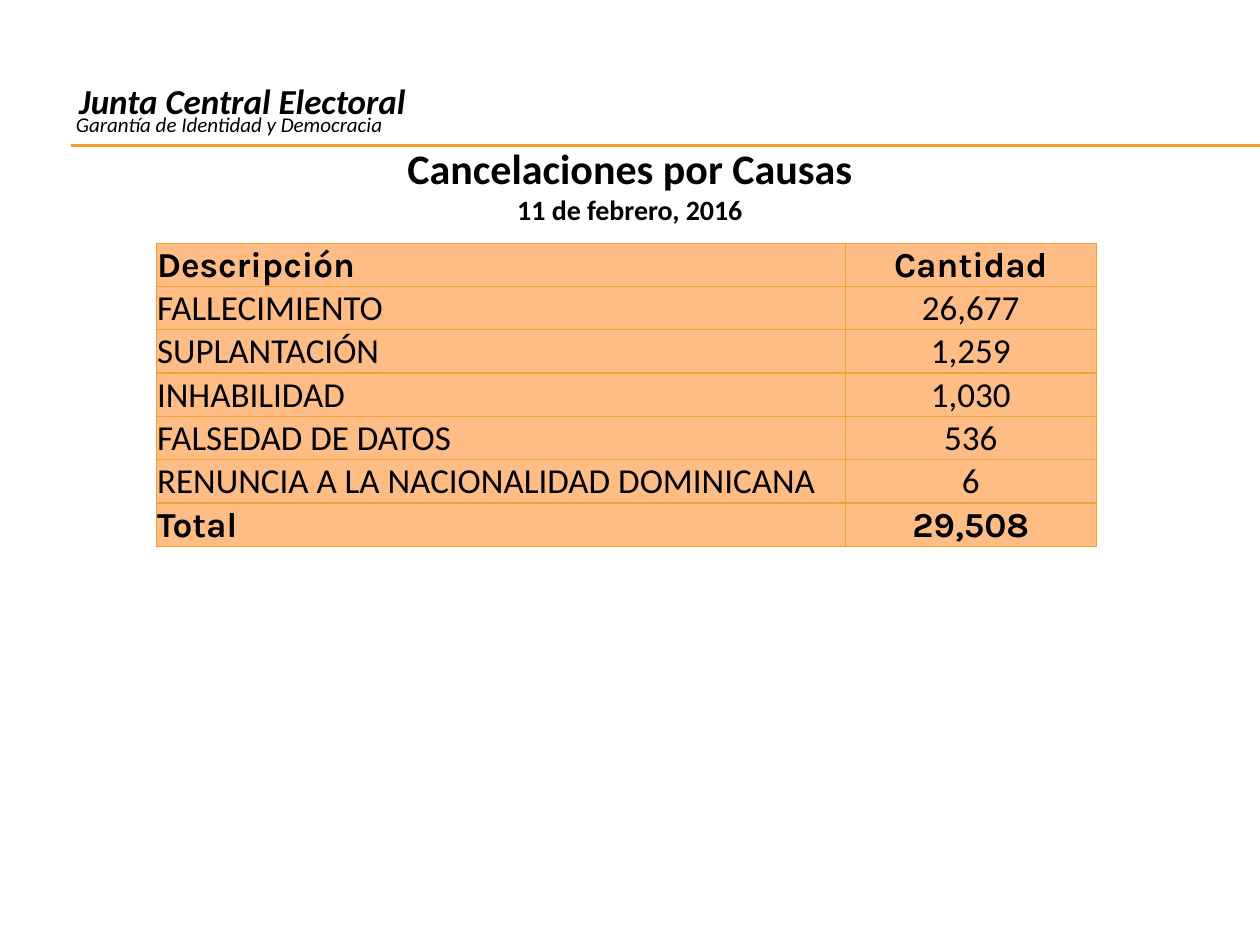
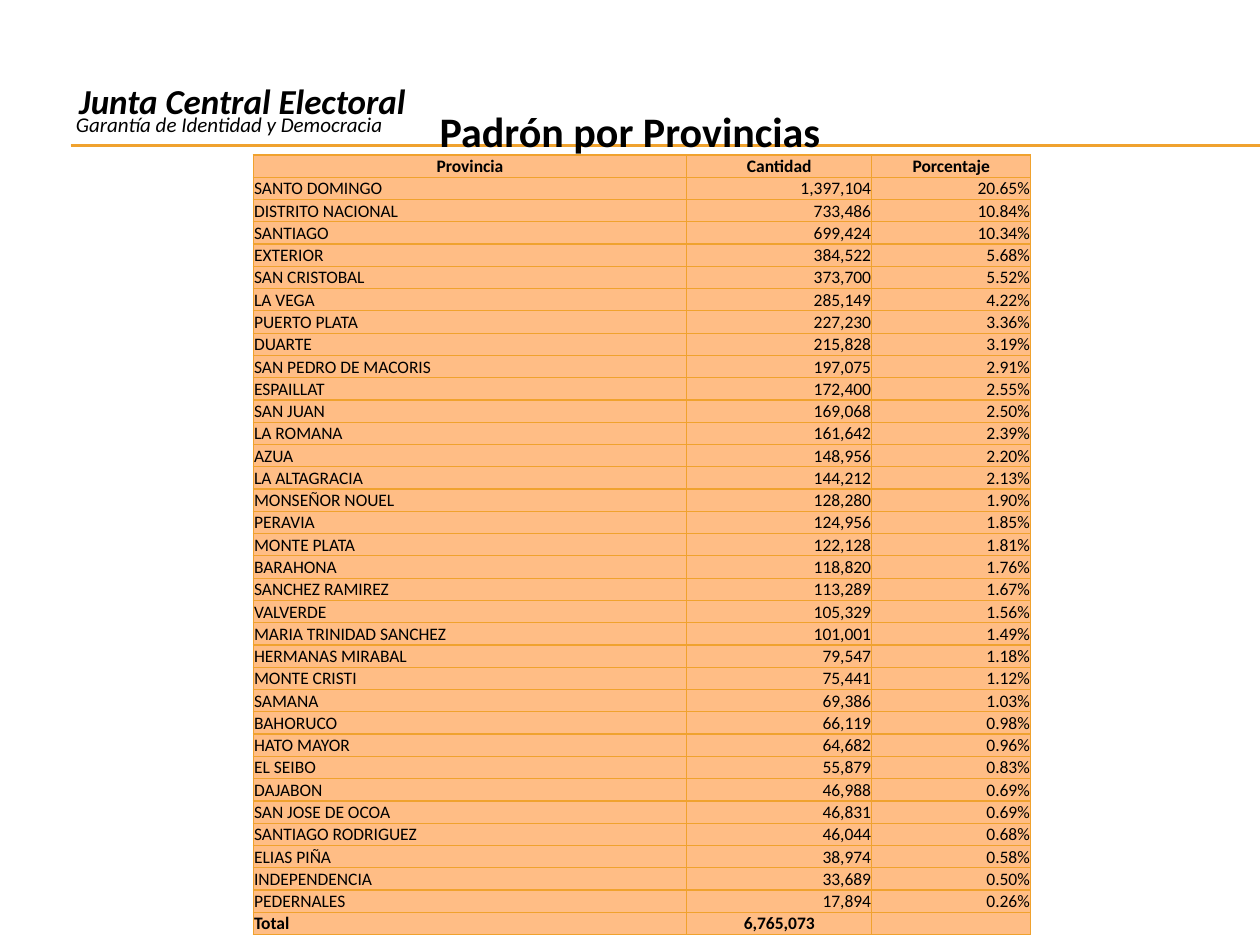
from lxml.etree import SubElement
from pptx import Presentation
from pptx.dml.color import RGBColor
from pptx.enum.shapes import MSO_CONNECTOR
from pptx.enum.text import MSO_ANCHOR, MSO_AUTO_SIZE, PP_ALIGN
from pptx.oxml.ns import qn
from pptx.util import Inches, Pt

GRID_COLUMNS, GRID_ROWS = 100, 75
BLACK, GOLD, PEACH = "000000", "F0A22E", "FFBD85"
ALIGNMENTS = {"l": PP_ALIGN.LEFT, "c": PP_ALIGN.CENTER, "r": PP_ALIGN.RIGHT}

TITLE = {"size": Pt(24), "bold": True}
SUBTITLE = {"size": Pt(16), "bold": True}
ORGANIZATION = {"size": Pt(20), "bold": True, "italic": True}
MOTTO = {"size": Pt(12), "italic": True}

CAUSES = [
    ("Descripción", "Cantidad"),
    ("FALLECIMIENTO", "26,677"),
    ("SUPLANTACIÓN", "1,259"),
    ("INHABILIDAD", "1,030"),
    ("FALSEDAD DE DATOS", "536"),
    ("RENUNCIA A LA NACIONALIDAD DOMINICANA", "6"),
    ("Total", "29,508"),
]

PROVINCES = [
    ("Provincia", "Cantidad", "Porcentaje"),
    ("SANTO DOMINGO", "1,397,104", "20.65%"),
    ("DISTRITO NACIONAL", "733,486", "10.84%"),
    ("SANTIAGO", "699,424", "10.34%"),
    ("EXTERIOR", "384,522", "5.68%"),
    ("SAN CRISTOBAL", "373,700", "5.52%"),
    ("LA VEGA", "285,149", "4.22%"),
    ("PUERTO PLATA", "227,230", "3.36%"),
    ("DUARTE", "215,828", "3.19%"),
    ("SAN PEDRO DE MACORIS", "197,075", "2.91%"),
    ("ESPAILLAT", "172,400", "2.55%"),
    ("SAN JUAN", "169,068", "2.50%"),
    ("LA ROMANA", "161,642", "2.39%"),
    ("AZUA", "148,956", "2.20%"),
    ("LA ALTAGRACIA", "144,212", "2.13%"),
    ("MONSEÑOR NOUEL", "128,280", "1.90%"),
    ("PERAVIA", "124,956", "1.85%"),
    ("MONTE PLATA", "122,128", "1.81%"),
    ("BARAHONA", "118,820", "1.76%"),
    ("SANCHEZ RAMIREZ", "113,289", "1.67%"),
    ("VALVERDE", "105,329", "1.56%"),
    ("MARIA TRINIDAD SANCHEZ", "101,001", "1.49%"),
    ("HERMANAS MIRABAL", "79,547", "1.18%"),
    ("MONTE CRISTI", "75,441", "1.12%"),
    ("SAMANA", "69,386", "1.03%"),
    ("BAHORUCO", "66,119", "0.98%"),
    ("HATO MAYOR", "64,682", "0.96%"),
    ("EL SEIBO", "55,879", "0.83%"),
    ("DAJABON", "46,988", "0.69%"),
    ("SAN JOSE DE OCOA", "46,831", "0.69%"),
    ("SANTIAGO RODRIGUEZ", "46,044", "0.68%"),
    ("ELIAS PIÑA", "38,974", "0.58%"),
    ("INDEPENDENCIA", "33,689", "0.50%"),
    ("PEDERNALES", "17,894", "0.26%"),
    ("Total", "6,765,073", ""),
]


def color(value):
    return RGBColor.from_string(value)


def set_attributes(target, values):
    for name, value in values.items():
        setattr(target, name, value)


class Deck:
    def __init__(self):
        self.presentation = Presentation()
        set_attributes(self.presentation, {"slide_width": Inches(10), "slide_height": Inches(7.5)})
        self.column = self.presentation.slide_width / GRID_COLUMNS
        self.row = self.presentation.slide_height / GRID_ROWS
        self.slide = None

    def place(self, left, top, width, height):
        return (round(left * self.column), round(top * self.row),
                round(width * self.column), round(height * self.row))

    def new_slide(self):
        self.slide = self.presentation.slides.add_slide(self.presentation.slide_layouts[6])
        for level in (11.5, 11.6):
            self.rule(5.6, 100, level)
        self.text((5.3, 5.8, 28.1, 4.4), [("Junta Central Electoral", ORGANIZATION)], "l", False)
        self.text((4.9, 8.4, 26.6, 3), [("Garantía de Identidad y Democracia", MOTTO)], "c", False)

    def rule(self, start, end, level):
        left, top, width, _ = self.place(start, level, end - start, 0)
        line = self.slide.shapes.add_connector(MSO_CONNECTOR.STRAIGHT, left, top, left + width, top)
        line.line.color.rgb = color(GOLD)
        line.line.width = Pt(0.75)
        SubElement(line._element.spPr, qn("a:effectLst"))

    def fill_paragraph(self, paragraph, words, values, alignment):
        paragraph.alignment = ALIGNMENTS[alignment]
        if not words:
            SubElement(paragraph._p, qn("a:endParaRPr"), sz=str(round(values["size"].pt * 100)))
            return
        run = paragraph.add_run()
        run.text = words
        set_attributes(run.font, {"name": "Calibri", **values})
        run.font.color.rgb = color(BLACK)

    def text(self, area, lines, alignment="c", wrap=True):
        frame = self.slide.shapes.add_textbox(*self.place(*area)).text_frame
        set_attributes(frame, {"word_wrap": wrap, "auto_size": MSO_AUTO_SIZE.SHAPE_TO_FIT_TEXT})
        for index, (words, values) in enumerate(lines):
            paragraph = frame.add_paragraph() if index else frame.paragraphs[0]
            self.fill_paragraph(paragraph, words, values, alignment)

    def borders(self, cell):
        properties = cell._tc.get_or_add_tcPr()
        for index, side in enumerate(("lnL", "lnR", "lnT", "lnB")):
            border = properties.makeelement(qn(f"a:{side}"), {"w": str(Pt(0.79))})
            fill = SubElement(border, qn("a:solidFill"))
            SubElement(fill, qn("a:srgbClr"), val=GOLD)
            properties.insert(index, border)

    def table(self, left, top, widths, row_height, records, size, alignments, strong_font):
        area = self.place(left, top, sum(widths), row_height * len(records))
        table = self.slide.shapes.add_table(len(records), len(widths), *area).table
        set_attributes(table, {"first_row": False, "horz_banding": False})
        for column, width in zip(table.columns, widths):
            column.width = round(width * self.column)
        header, body, total = alignments
        row_alignments = [header] + [body] * (len(records) - 2) + [total]
        margins = {"margin_left": Pt(0.5), "margin_right": Pt(0.5), "margin_top": Pt(0.5),
                   "margin_bottom": 0, "vertical_anchor": MSO_ANCHOR.BOTTOM}
        for index, (record, row) in enumerate(zip(records, table.rows)):
            row.height = round(row_height * self.row)
            strong = index in (0, len(records) - 1)
            values = {"size": Pt(size), "bold": strong, "name": strong_font if strong else "Calibri"}
            for cell, words, alignment in zip(row.cells, record, row_alignments[index]):
                set_attributes(cell, margins)
                cell.fill.solid()
                cell.fill.fore_color.rgb = color(PEACH)
                self.borders(cell)
                self.fill_paragraph(cell.text_frame.paragraphs[0], words, values, alignment)


def main():
    deck = Deck()

    deck.new_slide()
    deck.table(12.4, 19.3, (54.7, 19.9), 3.44, CAUSES, 20, ("lc", "lc", "lc"), "Karla")
    deck.text((0, 10.8, 100, 7.7), [("Cancelaciones por Causas", TITLE),
                                    ("11 de febrero, 2016", SUBTITLE)])

    deck.new_slide()
    deck.text((0, 7.9, 100, 5), [("Padrón por Provincias", TITLE)])
    deck.table(20.1, 12.3, (34.4, 14.7, 12.6), 1.77, PROVINCES, 10, ("ccc", "lrr", "lcl"), "Calibri")

    deck.presentation.save("out.pptx")


if __name__ == "__main__":
    main()
